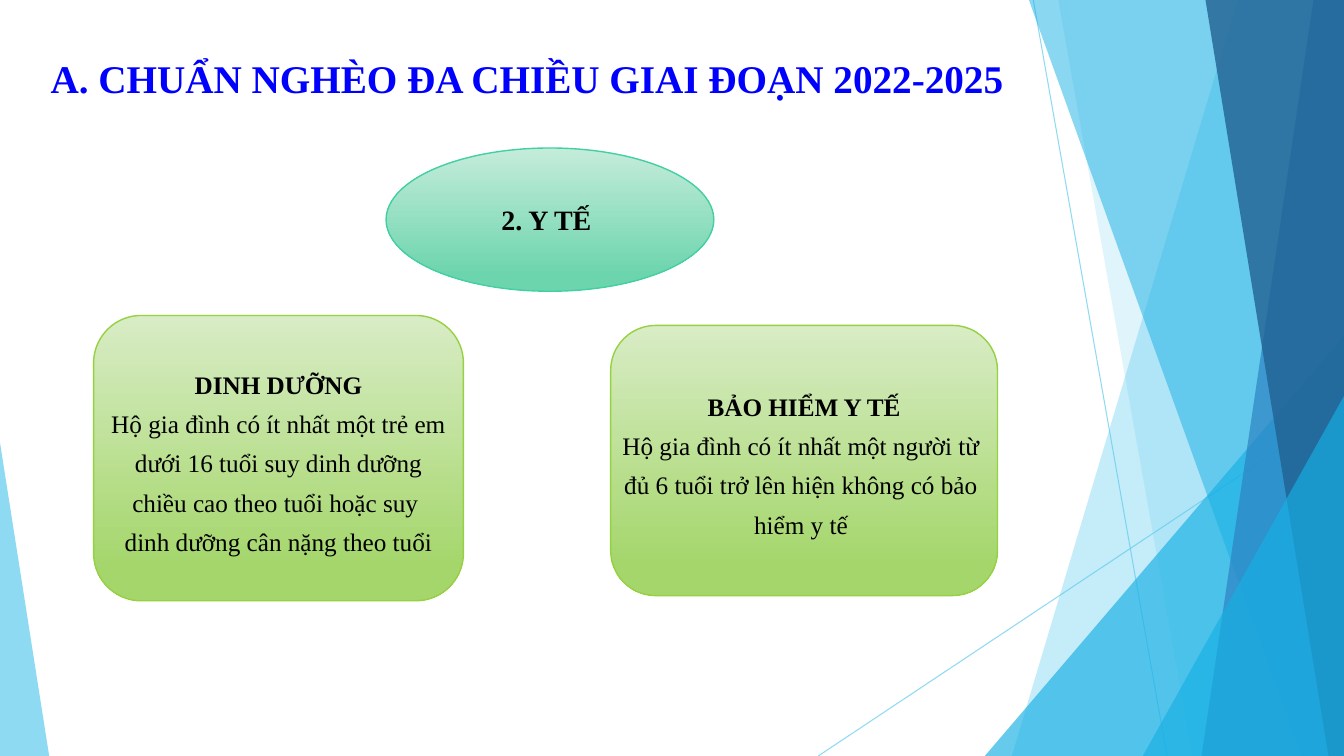
from lxml.etree import SubElement
from pptx import Presentation
from pptx.dml.color import RGBColor
from pptx.enum.shapes import MSO_CONNECTOR as Connector, MSO_SHAPE as Shape
from pptx.enum.text import MSO_ANCHOR as Anchor, PP_ALIGN as Align
from pptx.oxml.ns import qn
from pptx.util import Cm, Pt

WIDTH, HEIGHT = 33.87, 19.05
FONT = "Times New Roman"
COLORS = {
    "sky": "5FCBEF", "cyan": "17B0E4", "blue": "2E83C3", "navy": "226292",
    "title": "0000FF", "text": "000000",
    "green top": "D8ECC5", "green bottom": "A5D66C", "green line": "96D141",
    "teal top": "C5ECDB", "teal bottom": "6DD5AE", "teal line": "42D0A2",
}

# Content
TITLE = "A. CHUẨN NGHÈO ĐA CHIỀU GIAI ĐOẠN 2022-2025"
TOPIC = "2. Y TẾ "
CARDS = [  # left, top, width, height, heading, lines
    (2.36, 7.95, 9.32, 7.19, "DINH DƯỠNG", [
        "Hộ gia đình có ít nhất một trẻ em",
        "dưới 16 tuổi suy dinh dưỡng",
        "chiều cao theo tuổi hoặc suy ",
        "dinh dưỡng cân nặng theo tuổi"]),
    (15.39, 8.2, 9.75, 6.81, "BẢO HIỂM Y TẾ", [
        "Hộ gia đình có ít nhất một người từ ",
        "đủ 6 tuổi trở lên hiện không có bảo ",
        "hiểm y tế "]),
]

# Backdrop, from back to front
RAYS = [(26.04, 0, 29.41, HEIGHT), (WIDTH, 10.24, 20.62, HEIGHT)]
FACETS = [  # bands: top x, bottom x; triangles: left, top, width, apex
    ("band", (31.19, 25.5), "sky", 36),
    ("band", (26.67, 30.05), "sky", 20),
    ("triangle", (24.82, 8.46, 9.05, 1), "cyan", 66),
    ("band", (25.93, 32.79), "cyan", 50),
    ("band", (33.1, 30.28), "blue", 70),
    ("band", (30.38, 33.48), "navy", 80),
    ("triangle", (28.8, 9.98, 5.07, 1), "cyan", 66),
    ("triangle", (0, 11.15, 1.24, 0), "sky", 70),
]


def color(name):
    return RGBColor.from_string(COLORS[name])


def set_opacity(fill, shape, percent):
    fill.solid()
    fill.fore_color.rgb = color(shape[1])
    for node in shape[0].element.spPr.iter(qn("a:srgbClr")):
        SubElement(node, qn("a:alpha"), val=str(percent * 1000))


def add_ray(slide, x1, y1, x2, y2):
    ray = slide.shapes.add_connector(Connector.STRAIGHT, Cm(x1), Cm(y1), Cm(x2), Cm(y2))
    ray.line.width = Pt(0.75)
    set_opacity(ray.line.fill, (ray, "sky"), 70)
    SubElement(ray.element.spPr, qn("a:effectLst"))


def add_facet(slide, kind, place, fill_name, opacity):
    if kind == "band":
        top_x, bottom_x = place
        builder = slide.shapes.build_freeform(Cm(top_x), 0)
        corners = [(WIDTH, 0), (WIDTH, HEIGHT), (bottom_x, HEIGHT)]
        builder.add_line_segments([(Cm(x), Cm(y)) for x, y in corners], close=True)
        shape = builder.convert_to_shape()
    else:
        left, top, width, apex = place
        shape = slide.shapes.add_shape(
            Shape.ISOSCELES_TRIANGLE, Cm(left), Cm(top), Cm(width), Cm(HEIGHT - top))
        shape.adjustments[0] = apex
    shape.shadow.inherit = False
    shape.line.fill.background()
    set_opacity(shape.fill, (shape, fill_name), opacity)


def add_panel(slide, kind, left, top, width, height, tint):
    shape = slide.shapes.add_shape(kind, Cm(left), Cm(top), Cm(width), Cm(height))
    shape.shadow.inherit = False
    shape.fill.gradient()
    shape.fill.gradient_angle = 270
    for stop, position, end in zip(shape.fill.gradient_stops, (0, 0.88), ("top", "bottom")):
        stop.position = position
        stop.color.rgb = color(f"{tint} {end}")
    shape.line.color.rgb = color(f"{tint} line")
    shape.line.width = Pt(1)
    return shape


def write(shape, lines, size=18, bold_lines=1, color_name="text", spacing=1.0,
          anchor=Anchor.MIDDLE, wrap=True):
    frame = shape.text_frame
    frame.word_wrap = wrap
    frame.vertical_anchor = anchor
    for index, line in enumerate(lines):
        paragraph = frame.add_paragraph() if index else frame.paragraphs[0]
        paragraph.alignment = Align.CENTER
        paragraph.line_spacing = spacing
        run = paragraph.add_run()
        run.text = line
        run.font.name = FONT
        run.font.size = Pt(size)
        run.font.bold = index < bold_lines
        run.font.color.rgb = color(color_name)


def main():
    presentation = Presentation()
    presentation.slide_width, presentation.slide_height = Cm(WIDTH), Cm(HEIGHT)
    slide = presentation.slides.add_slide(presentation.slide_layouts[6])

    # Backdrop
    for ray in RAYS:
        add_ray(slide, *ray)
    for facet in FACETS:
        add_facet(slide, *facet)

    # Cards
    for left, top, width, height, heading, lines in CARDS:
        card = add_panel(slide, Shape.ROUNDED_RECTANGLE, left, top, width, height, "green")
        write(card, [heading, *lines], spacing=1.3, wrap=False)

    # Topic and title
    topic = add_panel(slide, Shape.OVAL, 9.73, 3.73, 8.26, 3.61, "teal")
    write(topic, [TOPIC], size=20)
    title = slide.shapes.add_textbox(Cm(0.79), Cm(1.24), Cm(24.97), Cm(2.34))
    write(title, [TITLE], size=28, color_name="title", anchor=Anchor.TOP)

    presentation.save("out.pptx")


if __name__ == "__main__":
    main()
